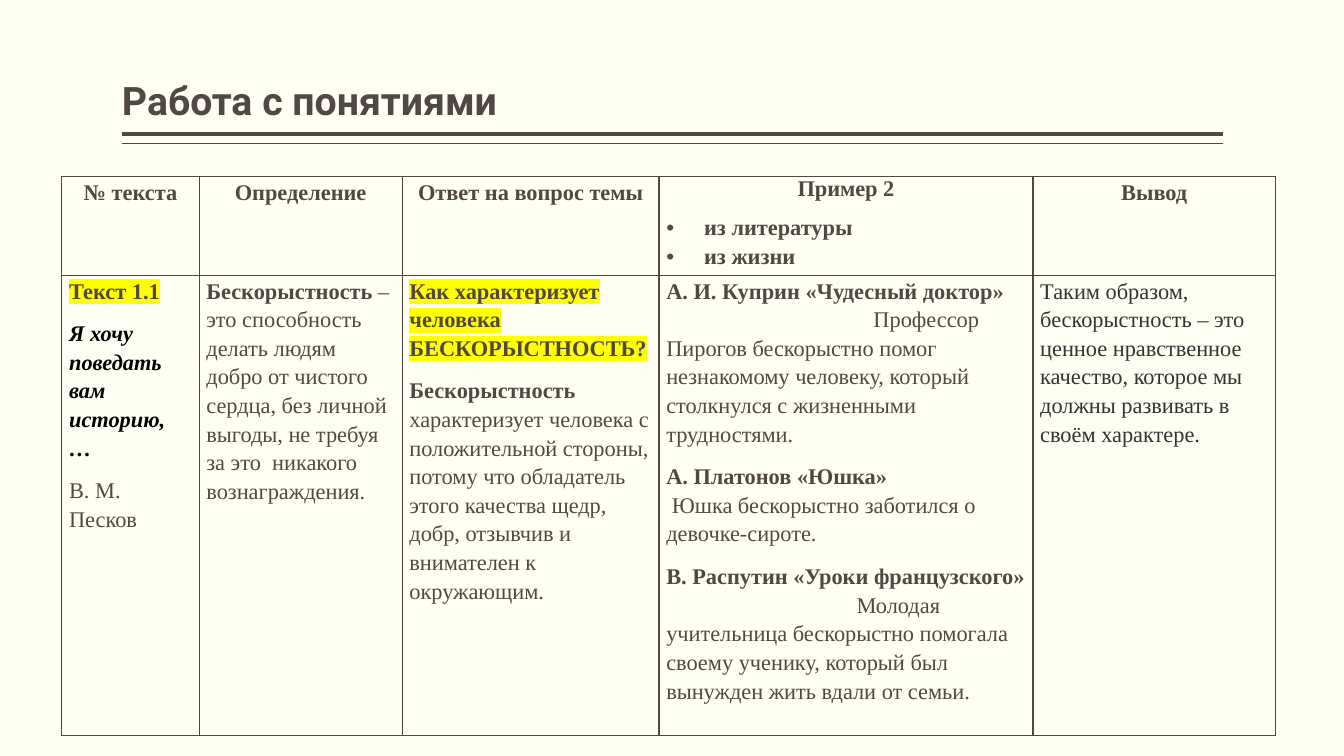
from dataclasses import dataclass

from lxml import etree
from pptx import Presentation
from pptx.dml.color import RGBColor
from pptx.enum.shapes import MSO_CONNECTOR
from pptx.enum.text import MSO_ANCHOR, PP_ALIGN
from pptx.oxml.ns import qn
from pptx.util import Pt

STRAIGHT = MSO_CONNECTOR.STRAIGHT
BOTTOM = MSO_ANCHOR.BOTTOM
TOP = MSO_ANCHOR.TOP
LEFT = PP_ALIGN.LEFT
CENTER = PP_ALIGN.CENTER

BROWN = "514843"
BLACK = "000000"
CHARCOAL = "333333"
YELLOW = "FFFF00"
CREAM = "FFFFF3"
TABLE_FONT = "Times New Roman"
TITLE_FONT = "Roboto"
RULE_LEFT, RULE_RIGHT = 87.1, 873.4
COLUMN_WIDTHS = (98.1, 145, 183.5, 267.1, 173.3)
ROW_HEIGHTS = (65.3, 306)
BULLET_INDENT = 27


@dataclass(frozen=True)
class Span:
    text: str
    bold: bool = False
    italic: bool = False
    color: str = BROWN
    highlight: str = ""
    font: str = TABLE_FONT
    size: float = 16


@dataclass(frozen=True)
class Para:
    spans: tuple[Span, ...]
    align: PP_ALIGN = LEFT
    line: float = 1.15
    after: float = 10
    first_indent: float = 0
    bullet: bool = False


@dataclass(frozen=True)
class Rule:
    y: float
    width: float


def rgb(value: str) -> RGBColor:
    return RGBColor.from_string(value)


def plain(text: str, color: str = BROWN) -> Para:
    return Para((Span(text, color=color),))


def heading(text: str) -> Para:
    return Para((Span(text, bold=True),), CENTER)


def bullet(text: str, line: float) -> Para:
    return Para((Span(text, bold=True),), line=line, after=0,
                first_indent=-BULLET_INDENT, bullet=True)


def marked(text: str) -> Para:
    return Para((Span(text, bold=True, highlight=YELLOW),))


def defined(term: str, text: str) -> Para:
    return Para((Span(term, bold=True), Span(text)))


def example(work: str, text: str, indent: float) -> tuple[Para, Para]:
    return (Para((Span(work, bold=True),), after=0),
            Para((Span(text),), first_indent=indent))


RULES = (Rule(95.8, 3), Rule(102.7, 1))

TITLE = Para((Span("Работа с понятиями", bold=True, font=TITLE_FONT, size=28),),
             line=0.9, after=0)

HEADER = (
    (heading("№ текста"),),
    (heading("Определение"),),
    (heading("Ответ на вопрос темы"),),
    (Para((Span("Пример 2", bold=True),), CENTER, line=1),
     bullet("из литературы", 1), bullet("из жизни", 1.15)),
    (heading("Вывод"),),
)

BODY = (
    (marked("Текст 1.1"),
     Para((Span("Я хочу поведать вам историю, …", bold=True, italic=True, color=BLACK),)),
     plain("В. М. Песков")),
    (defined("Бескорыстность",
             " – это способность делать людям добро от чистого сердца, без личной "
             "выгоды, не требуя за это  никакого вознаграждения."),),
    (marked("Как характеризует человека БЕСКОРЫСТНОСТЬ?"),
     defined("Бескорыстность",
             " характеризует человека с положительной стороны, потому что обладатель "
             "этого качества щедр, добр, отзывчив и внимателен к окружающим.")),
    (*example("А. И. Куприн «Чудесный доктор»",
              "Профессор Пирогов бескорыстно помог незнакомому человеку, который "
              "столкнулся с жизненными трудностями.", 148),
     *example("А. Платонов «Юшка»",
              "Юшка бескорыстно заботился о девочке-сироте.", 4),
     *example("В. Распутин «Уроки французского»",
              "Молодая учительница бескорыстно помогала своему ученику, который был "
              "вынужден жить вдали от семьи.", 136)),
    (plain("Таким образом, бескорыстность – это ценное нравственное качество, "
           "которое мы должны развивать в своём характере.", CHARCOAL),),
)


def add_span(paragraph, span: Span) -> None:
    run = paragraph.add_run()
    run.text = span.text
    font = run.font
    font.size = Pt(span.size)
    font.bold = span.bold
    font.italic = span.italic
    font.color.rgb = rgb(span.color)
    if span.highlight:
        properties = run._r.get_or_add_rPr()
        highlight = etree.SubElement(properties, qn("a:highlight"))
        etree.SubElement(highlight, qn("a:srgbClr"), val=span.highlight)
    font.name = span.font


def write(frame, paras: tuple[Para, ...]) -> None:
    for index, para in enumerate(paras):
        paragraph = frame.add_paragraph() if index else frame.paragraphs[0]
        paragraph.alignment = para.align
        paragraph.line_spacing = para.line
        paragraph.space_before = Pt(0)
        paragraph.space_after = Pt(para.after)
        properties = paragraph._p.get_or_add_pPr()
        properties.set("marL", str(Pt(BULLET_INDENT if para.bullet else 0)))
        properties.set("indent", str(Pt(para.first_indent)))
        if para.bullet:
            etree.SubElement(properties, qn("a:buFont"), typeface="Arial")
            etree.SubElement(properties, qn("a:buChar"), char="•")
        for span in para.spans:
            add_span(paragraph, span)


def add_rule(page, rule: Rule) -> None:
    line = page.shapes.add_connector(
        STRAIGHT, Pt(RULE_RIGHT), Pt(rule.y), Pt(RULE_LEFT), Pt(rule.y))
    line.line.color.rgb = rgb(BROWN)
    line.line.width = Pt(rule.width)
    etree.SubElement(line._element.spPr, qn("a:effectLst"))


def add_title(page) -> None:
    box = page.shapes.add_textbox(
        Pt(RULE_LEFT), Pt(5.8), Pt(RULE_RIGHT - RULE_LEFT), Pt(86.4))
    frame = box.text_frame
    frame.word_wrap = True
    frame.vertical_anchor = BOTTOM
    frame.margin_left = frame.margin_right = Pt(0)
    frame.margin_top = frame.margin_bottom = Pt(3.6)
    write(frame, (TITLE,))


def fill_cell(cell, paras: tuple[Para, ...]) -> None:
    cell.margin_left = cell.margin_right = Pt(5.2)
    cell.margin_top = cell.margin_bottom = Pt(0)
    cell.vertical_anchor = TOP
    cell.fill.background()
    properties = cell._tc.get_or_add_tcPr()
    for index, side in enumerate(("lnL", "lnR", "lnT", "lnB")):
        border = etree.Element(qn(f"a:{side}"), w=str(Pt(1)))
        fill = etree.SubElement(border, qn("a:solidFill"))
        etree.SubElement(fill, qn("a:srgbClr"), val=BROWN)
        properties.insert(index, border)
    write(cell.text_frame, paras)


def add_concepts(page) -> None:
    table = page.shapes.add_table(
        len(ROW_HEIGHTS), len(COLUMN_WIDTHS), Pt(44.2), Pt(126.2),
        Pt(sum(COLUMN_WIDTHS)), Pt(sum(ROW_HEIGHTS))).table
    table.first_row = False
    table.horz_banding = False
    for column, width in zip(table.columns, COLUMN_WIDTHS):
        column.width = Pt(width)
    for row, height, contents in zip(table.rows, ROW_HEIGHTS, (HEADER, BODY)):
        row.height = Pt(height)
        for cell, paras in zip(row.cells, contents):
            fill_cell(cell, paras)


def main() -> None:
    deck = Presentation()
    deck.slide_width, deck.slide_height = Pt(960), Pt(540)
    page = deck.slides.add_slide(deck.slide_layouts[6])
    page.background.fill.solid()
    page.background.fill.fore_color.rgb = rgb(CREAM)
    for rule in RULES:
        add_rule(page, rule)
    add_title(page)
    add_concepts(page)
    deck.save("out.pptx")


if __name__ == "__main__":
    main()
